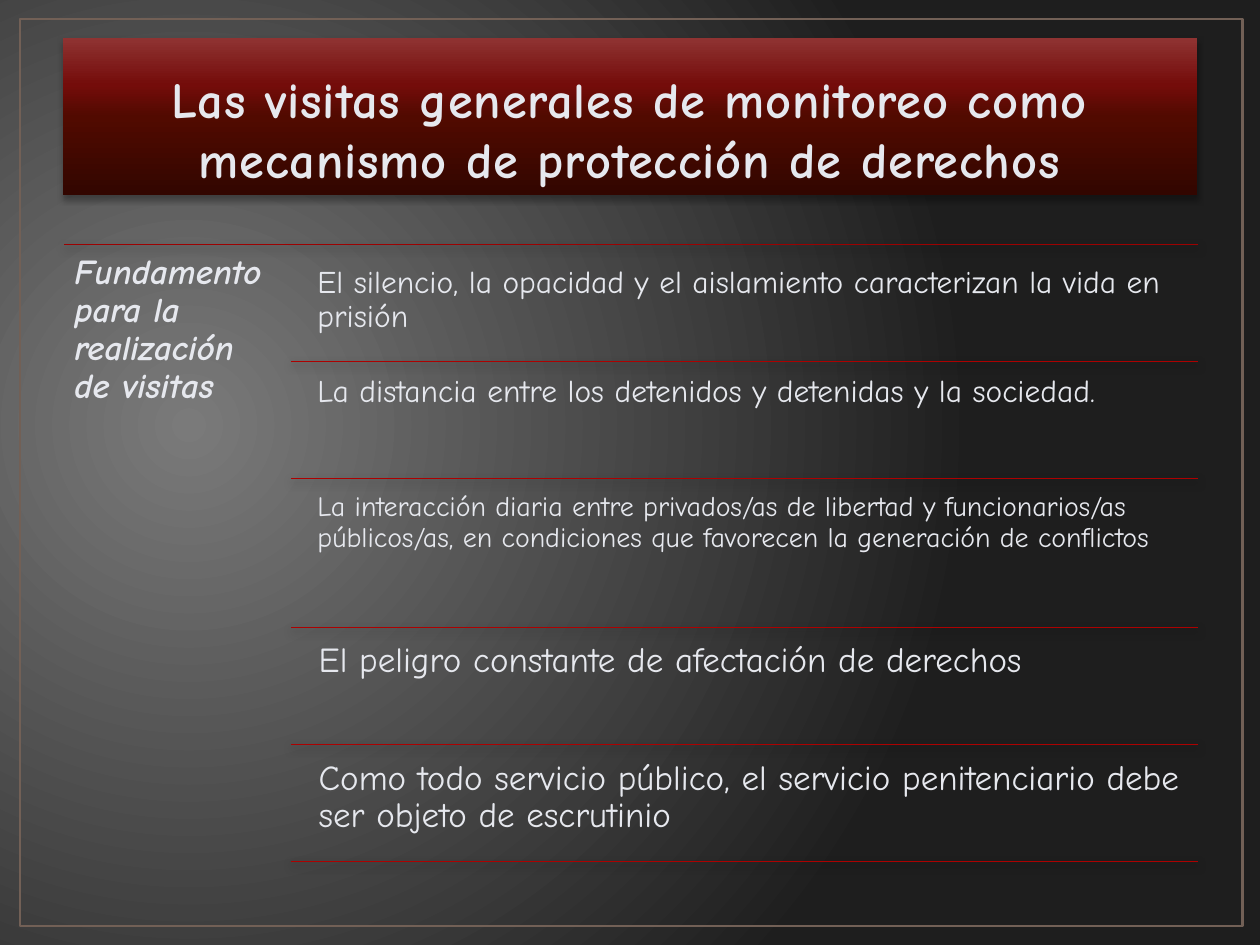
from dataclasses import dataclass

from lxml import etree
from pptx import Presentation
from pptx.dml.color import RGBColor
from pptx.enum.shapes import MSO_CONNECTOR, MSO_SHAPE
from pptx.enum.text import MSO_ANCHOR, PP_ALIGN
from pptx.oxml import parse_xml
from pptx.oxml.ns import qn
from pptx.util import Inches, Pt

STRAIGHT = MSO_CONNECTOR.STRAIGHT
RECTANGLE = MSO_SHAPE.RECTANGLE
TOP, BOTTOM = MSO_ANCHOR.TOP, MSO_ANCHOR.BOTTOM
LEFT, CENTER = PP_ALIGN.LEFT, PP_ALIGN.CENTER
DRAWING_NS = 'xmlns:a="http://schemas.openxmlformats.org/drawingml/2006/main"'


@dataclass(frozen=True)
class Theme:
    font: str = "Comic Neue"
    text: str = "E6E8EE"
    frame: str = "726056"
    top_rule: str = "9D0101"
    rule: str = "AD0101"
    background: tuple = ((0, "7A7A7A"), (100, "1E1E1E"))
    banner: tuple = ((0, "320600"), (50, "510A00"), (70, "740C0A"), (100, "8F3332"))
    title_size: float = 28.8
    large: int = 20
    medium: int = 18
    small: int = 16


THEME = Theme()

# Content: each reason has its text, size, row height and extra top offset
TITLE = "Las visitas generales de monitoreo como mecanismo de protección de derechos"
TOPIC = "Fundamento para la realización de visitas"
REASONS = [
    ("El silencio, la opacidad y el aislamiento caracterizan la vida en prisión",
     THEME.medium, 0.89, 0.06),
    ("La distancia entre los detenidos y detenidas y la sociedad.",
     THEME.medium, 0.89, 0),
    ("La interacción diaria entre privados/as de libertad y funcionarios/as "
     "públicos/as, en condiciones que favorecen la generación de conflictos",
     THEME.small, 1.14, 0),
    ("El peligro constante de afectación de derechos", THEME.large, 0.89, 0),
    ("Como todo servicio público, el servicio penitenciario debe ser objeto de escrutinio",
     THEME.large, 0.89, 0),
]

# Grid, in inches
WIDTH, HEIGHT = 10, 7.5
LIST_LEFT, LIST_TOP, LIST_WIDTH = 0.51, 1.94, 9
LIST_RIGHT = LIST_LEFT + LIST_WIDTH
TOPIC_WIDTH = LIST_WIDTH / 5
RULE_LEFT = LIST_LEFT + TOPIC_WIDTH
REASON_LEFT = RULE_LEFT + 0.14
ROW_GAP = 0.04


def inches(*lengths):
    return [Inches(length) for length in lengths]


def gradient(stops, direction):
    marks = "".join(f'<a:gs pos="{pos * 1000}"><a:srgbClr val="{color}"/></a:gs>'
                    for pos, color in stops)
    return parse_xml(f'<a:gradFill {DRAWING_NS} rotWithShape="1">'
                     f'<a:gsLst>{marks}</a:gsLst>{direction}</a:gradFill>')


def set_gradient(fill, parent, stops, direction):
    fill.solid()
    solid = parent.find(".//" + qn("a:solidFill"))
    solid.getparent().replace(solid, gradient(stops, direction))


def add_shadow(shape, opacity, blur, distance):
    properties = shape.element.spPr
    effects = etree.SubElement(properties, qn("a:effectLst"))
    effects.append(parse_xml(
        f'<a:outerShdw {DRAWING_NS} blurRad="{Pt(blur)}" dist="{Pt(distance)}" '
        f'dir="5400000" rotWithShape="0"><a:srgbClr val="000000">'
        f'<a:alpha val="{opacity * 1000}"/></a:srgbClr></a:outerShdw>'))


def write(frame, text, size, align=LEFT, anchor=TOP, bold=False, italic=False):
    frame.word_wrap = True
    frame.vertical_anchor = anchor
    frame.text = text
    paragraph = frame.paragraphs[0]
    paragraph.alignment = align
    font = paragraph.runs[0].font
    font.name, font.size = THEME.font, Pt(size)
    font.bold, font.italic = bold, italic
    font.color.rgb = RGBColor.from_string(THEME.text)
    return paragraph


def add_text(slide, box, text, size, inset, **style):
    frame = slide.shapes.add_textbox(*inches(*box)).text_frame
    frame.margin_left = frame.margin_right = Inches(inset)
    frame.margin_top = frame.margin_bottom = Inches(inset)
    write(frame, text, size, **style).line_spacing = 0.9


def add_rule(slide, left, y, color):
    rule = slide.shapes.add_connector(STRAIGHT, *inches(left, y, LIST_RIGHT, y))
    rule.line.color.rgb = RGBColor.from_string(color)
    rule.line.width = Pt(0.75)
    add_shadow(rule, 43, 5, 2)


def add_frame(slide):
    frame = slide.shapes.add_shape(RECTANGLE, *inches(0.16, 0.15, 9.7, 7.2))
    frame.shadow.inherit = False
    frame.fill.background()
    frame.line.color.rgb = RGBColor.from_string(THEME.frame)
    frame.line.width = Pt(1.5)


def add_title(slide):
    title = slide.shapes.title
    title.left, title.top, title.width, title.height = inches(0.5, 0.3, 9, 1.25)
    set_gradient(title.fill, title.element.spPr, THEME.banner,
                 '<a:lin ang="16200000" scaled="0"/>')
    add_shadow(title, 32, 3.5, 2.2)
    heading = write(title.text_frame, TITLE, THEME.title_size, CENTER, BOTTOM, bold=True)
    heading.runs[0].font._element.set("spc", "50")


def add_reasons(slide):
    y = LIST_TOP
    for text, size, height, offset in REASONS:
        y += ROW_GAP
        inset = 0.08 if size == THEME.large else 0.07
        add_text(slide, (REASON_LEFT, y + offset, LIST_RIGHT - REASON_LEFT, height),
                 text, size, inset)
        y += height
        add_rule(slide, RULE_LEFT, y, THEME.rule)


def main():
    deck = Presentation()
    deck.slide_width, deck.slide_height = inches(WIDTH, HEIGHT)
    slide = deck.slides.add_slide(deck.slide_layouts[5])

    # Background and banner
    set_gradient(slide.background.fill, slide.element, THEME.background,
                 '<a:path path="circle">'
                 '<a:fillToRect l="15000" t="50000" r="85000" b="60000"/></a:path>')
    add_frame(slide)
    add_title(slide)

    # Topic on the left, ruled reasons on the right
    add_rule(slide, LIST_LEFT, LIST_TOP, THEME.top_rule)
    add_text(slide, (LIST_LEFT, LIST_TOP, TOPIC_WIDTH, 4.95), TOPIC, THEME.large, 0.08,
             bold=True, italic=True)
    add_reasons(slide)
    deck.save("out.pptx")


if __name__ == "__main__":
    main()
